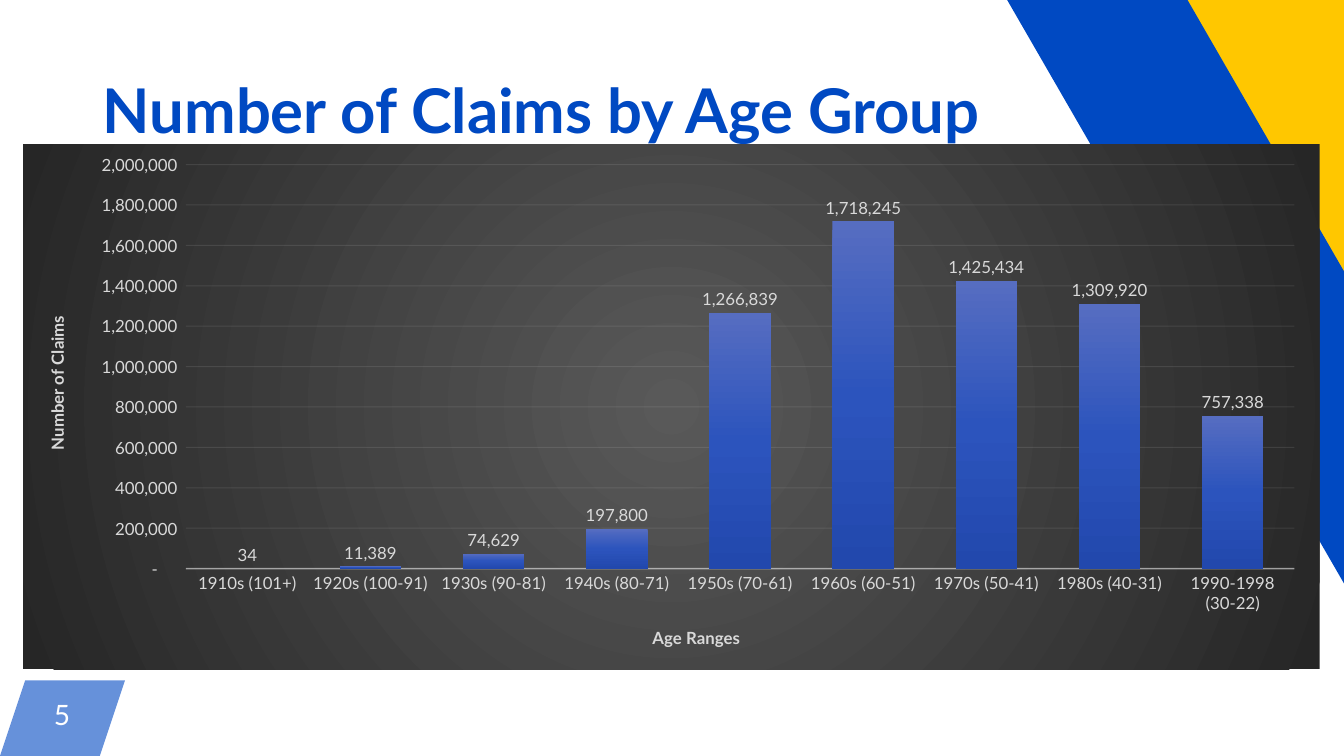
"""Build the slide that charts the number of claims by age group."""
from lxml import etree
from pptx import Presentation
from pptx import util as u
from pptx.chart import data as cd
from pptx.dml.color import RGBColor
from pptx.enum import chart as ch, text
from pptx.oxml import parse_xml
from pptx.oxml.ns import nsdecls, qn

TITLE = "Number of Claims by Age Group"
PAGE = "5"
CLAIMS = [
    ("1910s (101+)", 34),
    ("1920s (100-91)", 11389),
    ("1930s (90-81)", 74629),
    ("1940s (80-71)", 197800),
    ("1950s (70-61)", 1266839),
    ("1960s (60-51)", 1718245),
    ("1970s (50-41)", 1425434),
    ("1980s (40-31)", 1309920),
    ("1990-1998 (30-22)", 757338),
]
FORMAT = '_(* #,##0_);_(* \\(#,##0\\);_(* "-"??_);_('
FONT = "Lato"
HUES = {"blue": "0049C2", "gold": "FFC700", "white": "FFFFFF",
        "label": "D9D9D9", "rule": "F2F2F2"}
BAR = [(0, "566DC1"), (50, "2C54BD"), (100, "2248AD")]
BACK = [(0, "595959"), (100, "262626")]
WIDE, HIGH = 13.33, 7.5
BANDS = [
    ("blue", 60, [(0.25, 6.75), (1.24, 6.75), (0.99, HIGH), (0, HIGH)]),
    ("gold", 100, [(10.47, -2.17), (12.18, -3.15), (17.06, 5.36),
                   (15.35, 6.33)]),
    ("blue", 100, [(9.47, -0.9), (10.81, -1.68), (15.71, 6.82),
                   (14.37, 7.59)]),
]
BOXES = {"title": (0.92, 0.4, 11.5, 1.45), "page": (0.25, 6.75, 0.73, 0.75),
         "chart": (0.23, 1.43, 12.86, 5.21)}
PLOT = {"x": 12.54, "y": 3.9, "w": 85.5, "h": 76.95}
AXES = {"Age Ranges": {"x": 48.3, "y": 91.1},
        "Number of Claims": {"x": 1.45, "y": 32.1}}


def rgb(name):
    return RGBColor.from_string(HUES[name])


def box(name):
    return [u.Inches(n) for n in BOXES[name]]


def style(font, size, hue, bold=False):
    font.name, font.size, font.bold = FONT, u.Pt(size), bold
    font.color.rgb = rgb(hue)


def fade(node, share):
    for hue in node.iter(qn("a:srgbClr")):
        etree.SubElement(hue, qn("a:alpha")).set("val", str(share * 1000))


def blend(stops, tail):
    marks = "".join(f'<a:gs pos="{p * 1000}"><a:srgbClr val="{c}"/></a:gs>'
                    for p, c in stops)
    return (f'<a:gradFill {nsdecls("a")} rotWithShape="1">'
            f'<a:gsLst>{marks}</a:gsLst>{tail}</a:gradFill>')


def place(node, index, shares, lead=""):
    for old in node.findall(qn("c:layout")):
        node.remove(old)
    tags = "".join(f'<c:{k} val="{v / 100}"/>' for k, v in shares.items())
    node.insert(index, parse_xml(
        f'<c:layout {nsdecls("c")}><c:manualLayout>{lead}'
        f'<c:xMode val="edge"/><c:yMode val="edge"/>{tags}'
        '</c:manualLayout></c:layout>'))


def draw_band(slide, hue, share, points):
    spots = [(u.Inches(x), u.Inches(y)) for x, y in points]
    pen = slide.shapes.build_freeform(*spots[0])
    pen.add_line_segments(spots[1:])
    band = pen.convert_to_shape()
    band.shadow.inherit = False
    band.fill.solid()
    band.fill.fore_color.rgb = rgb(hue)
    band.line.fill.background()
    if share < 100:
        fade(band._element.spPr, share)


def add_text(shape, name, words, size, hue, bold=False):
    shape.left, shape.top, shape.width, shape.height = box(name)
    frame = shape.text_frame
    frame.word_wrap = True
    frame.vertical_anchor = text.MSO_ANCHOR.MIDDLE
    line = frame.paragraphs[0]
    line.text = words
    style(line.font, size, hue, bold)
    return frame, line


def name_axis(axis, words):
    line = axis.axis_title.text_frame.paragraphs[0]
    line.text = words
    style(line.font, 12, "label", True)
    place(axis.axis_title._element, 1, AXES[words])
    style(axis.tick_labels.font, 12, "label")
    axis.major_tick_mark = axis.minor_tick_mark = ch.XL_TICK_MARK.NONE


def draw_chart(slide):
    data = cd.CategoryChartData(number_format="#,##0")
    data.categories = [age for age, _ in CLAIMS]
    data.add_series("Series 1", [count for _, count in CLAIMS])
    chart = slide.shapes.add_chart(
        ch.XL_CHART_TYPE.COLUMN_CLUSTERED, *box("chart"), data).chart
    chart.has_legend = chart.has_title = False
    style(chart.font, 12, "label")
    root = chart._chartSpace
    sink = ('<a:path path="circle"><a:fillToRect l="50000" t="50000" '
            'r="50000" b="50000"/></a:path>')
    root.find(qn("c:txPr")).addprevious(parse_xml(
        f'<c:spPr {nsdecls("c", "a")}>{blend(BACK, sink)}'
        '<a:ln><a:noFill/></a:ln></c:spPr>'))
    place(root.find(".//" + qn("c:plotArea")), 0, PLOT,
          '<c:layoutTarget val="inner"/>')

    ages, counts = chart.category_axis, chart.value_axis
    name_axis(ages, "Age Ranges")
    name_axis(counts, "Number of Claims")
    ages.format.line.color.rgb = rgb("rule")
    ages.format.line.width = u.Pt(1)
    fade(ages._element.find(qn("c:spPr")), 54)
    counts.minimum_scale, counts.maximum_scale = 0, 2000000
    counts.major_unit = 200000
    counts.tick_labels.number_format = FORMAT
    counts.tick_labels.number_format_is_linked = False
    counts.format.line.fill.background()
    grid = counts.major_gridlines.format.line
    grid.color.rgb = rgb("rule")
    grid.width = u.Pt(0.75)
    fade(counts._element.find(qn("c:majorGridlines")), 10)

    plot = chart.plots[0]
    plot.gap_width, plot.overlap = 100, -24
    plot.vary_by_categories = False
    bars = plot.series[0]
    bars.invert_if_negative = False
    bars._element.get_or_add_spPr().append(
        parse_xml(blend(BAR, '<a:lin ang="5400000" scaled="0"/>')))
    tags = bars.data_labels
    tags.show_value = True
    tags.position = ch.XL_LABEL_POSITION.OUTSIDE_END
    tags.number_format, tags.number_format_is_linked = FORMAT, False
    style(tags.font, 12, "label")


def main():
    deck = Presentation()
    deck.slide_width, deck.slide_height = u.Inches(WIDE), u.Inches(HIGH)
    slide = deck.slides.add_slide(deck.slide_layouts[5])
    for band in BANDS:
        draw_band(slide, *band)
    _, line = add_text(slide.shapes.title, "title", TITLE, 44, "blue", True)
    line.alignment, line.line_spacing = text.PP_ALIGN.LEFT, 0.9
    label = slide.shapes.add_textbox(*box("page"))
    frame, line = add_text(label, "page", PAGE, 20, "white")
    frame.margin_left = frame.margin_right = u.Inches(0.04)
    frame.margin_top = frame.margin_bottom = u.Inches(0.04)
    line.alignment, line.line_spacing = text.PP_ALIGN.CENTER, u.Pt(17.7)
    draw_chart(slide)
    deck.save("out.pptx")


if __name__ == "__main__":
    main()
